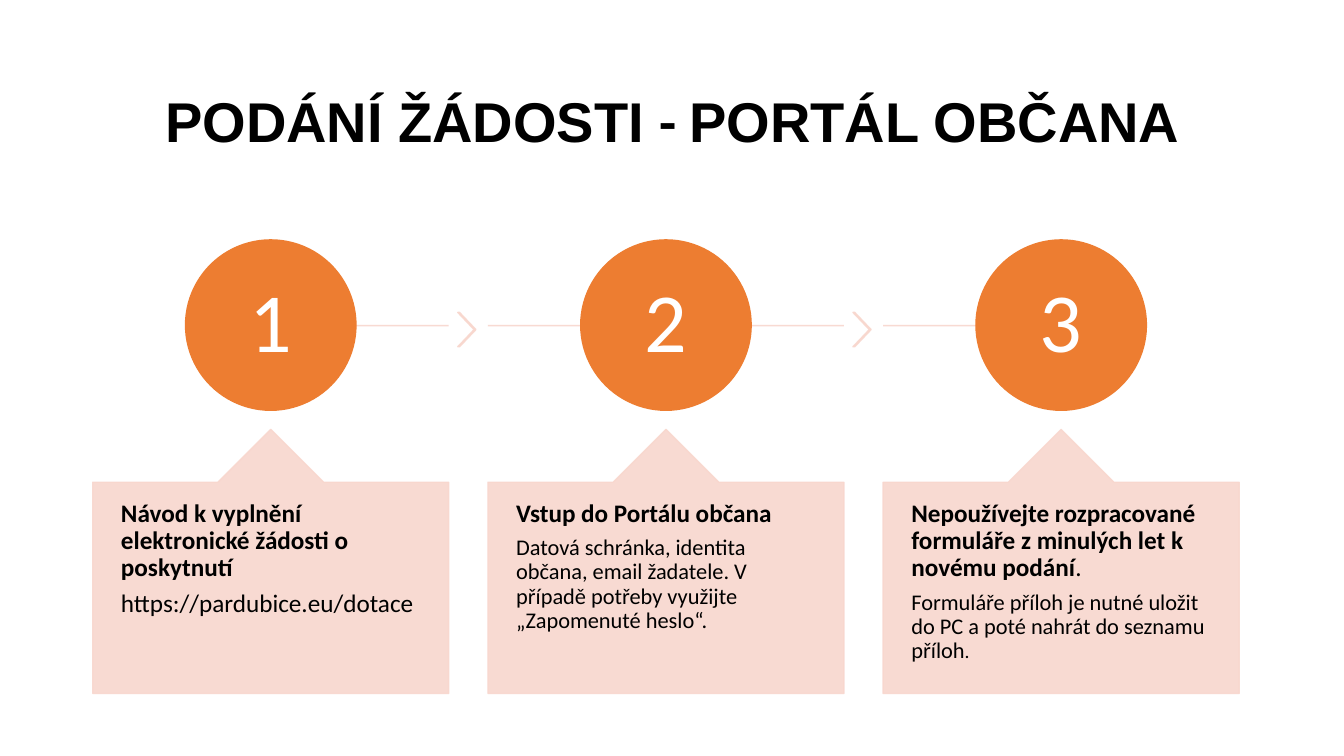
from lxml.etree import SubElement
from pptx import Presentation
from pptx.dml.color import RGBColor
from pptx.enum.shapes import MSO_CONNECTOR, MSO_SHAPE
from pptx.enum.text import MSO_ANCHOR, PP_ALIGN
from pptx.oxml.ns import qn
from pptx.util import Inches, Pt

# Content: runs are (text, format values)
BLACK = RGBColor(0x00, 0x00, 0x00)
WHITE = RGBColor(0xFF, 0xFF, 0xFF)
ORANGE = RGBColor(0xED, 0x7D, 0x31)
PINK = RGBColor(0xF8, 0xD7, 0xCE)
PINK_ALPHA = "90000"

HEADING = {"size": Pt(18), "bold": True}
LINK = {"size": Pt(18), "bold": False}
DETAIL = {"size": Pt(16), "bold": False}
FULL_STOP = {"size": Pt(14), "bold": False}
NUMBER = {"size": Pt(60), "color": WHITE}
TITLE = {"size": Pt(40), "bold": True, "name": "Arial"}

TITLE_RUNS = [
    ("PODÁNÍ ŽÁDOSTI ", TITLE),
    ("- ", {**TITLE, "name": "Calibri"}),
    ("PORTÁL OBČANA", TITLE),
]
STEPS = [
    [
        [("Návod k vyplnění elektronické žádosti o poskytnutí", HEADING)],
        [("https://pardubice.eu/dotace", LINK)],
    ],
    [
        [("Vstup do Portálu občana", HEADING)],
        [("Datová schránka, identita občana, email žadatele. "
          "V případě potřeby využijte „Zapomenuté heslo“.", DETAIL)],
    ],
    [
        [("Nepoužívejte rozpracované formuláře z minulých let k novému podání", HEADING),
         (".", LINK)],
        [("Formuláře příloh je nutné uložit do PC a poté nahrát do seznamu příloh", DETAIL),
         (".", FULL_STOP)],
    ],
]

# Layout in inches
LEFT, COLUMN_WIDTH, COLUMN_STEP = 0.92, 3.53, 3.92
CIRCLE_TOP, CIRCLE_SIZE = 2.38, 1.69
LINE_Y = 3.23
CHEVRON_TOP, CHEVRON_WIDTH, CHEVRON_HEIGHT, CHEVRON_GAP = 3.1, 0.18, 0.34, 0.09
CALLOUT_TOP, CALLOUT_HEIGHT = 4.26, 2.62


def write_paragraphs(text_frame, paragraphs, alignment, anchor, margins):
    text_frame.word_wrap = True
    text_frame.vertical_anchor = anchor
    for side, margin in zip(("left", "top", "right", "bottom"), margins):
        setattr(text_frame, f"margin_{side}", Inches(margin))
    for index, runs in enumerate(paragraphs):
        paragraph = text_frame.add_paragraph() if index else text_frame.paragraphs[0]
        paragraph.alignment = alignment
        paragraph.line_spacing = 0.9
        paragraph.space_before = Pt(0)
        paragraph.space_after = Pt(6.3) if index < len(paragraphs) - 1 else Pt(0)
        for text, values in runs:
            run = paragraph.add_run()
            run.text = text
            values = {"name": "Calibri", "color": BLACK, **values}
            run.font.color.rgb = values.pop("color")
            for name, value in values.items():
                setattr(run.font, name, value)


def make_translucent(shape):
    for color in shape._element.spPr.iter(qn("a:srgbClr")):
        SubElement(color, qn("a:alpha")).set("val", PINK_ALPHA)


def add_filled_shape(slide, kind, left, top, width, height, color, adjustments=()):
    shape = slide.shapes.add_shape(
        kind, Inches(left), Inches(top), Inches(width), Inches(height))
    shape.shadow.inherit = False
    shape.fill.solid()
    shape.fill.fore_color.rgb = color
    shape.line.color.rgb = color
    shape.line.width = Pt(1)
    for index, value in enumerate(adjustments):
        shape.adjustments[index] = value
    if color == PINK:
        make_translucent(shape)
    return shape


def add_line(slide, start, end):
    line = slide.shapes.add_connector(
        MSO_CONNECTOR.STRAIGHT, Inches(start), Inches(LINE_Y), Inches(end), Inches(LINE_Y))
    line.line.color.rgb = PINK
    line.line.width = Pt(1)
    make_translucent(line)
    SubElement(line._element.spPr, qn("a:effectLst"))


def add_step(slide, index, paragraphs):
    left = LEFT + index * COLUMN_STEP
    right = left + COLUMN_WIDTH
    center = left + COLUMN_WIDTH / 2
    is_last = index == len(STEPS) - 1

    # Connecting line, with a chevron before the next step
    add_line(slide, left if index else center, center if is_last else right)
    if not is_last:
        add_filled_shape(slide, MSO_SHAPE.CHEVRON, right + CHEVRON_GAP, CHEVRON_TOP,
                         CHEVRON_WIDTH, CHEVRON_HEIGHT, PINK, [0.9])

    # Numbered circle
    circle = add_filled_shape(slide, MSO_SHAPE.OVAL, center - CIRCLE_SIZE / 2, CIRCLE_TOP,
                              CIRCLE_SIZE, CIRCLE_SIZE, ORANGE)
    write_paragraphs(circle.text_frame, [[(str(index + 1), NUMBER)]],
                     PP_ALIGN.CENTER, MSO_ANCHOR.MIDDLE, [0.07] * 4)

    # Callout with the instructions
    callout = add_filled_shape(slide, MSO_SHAPE.UP_ARROW_CALLOUT, left, CALLOUT_TOP,
                               COLUMN_WIDTH, CALLOUT_HEIGHT, PINK, [0.5, 0.2, 0.2, 1])
    write_paragraphs(callout.text_frame, paragraphs,
                     PP_ALIGN.LEFT, MSO_ANCHOR.TOP, [0.28, 0.18, 0.28, 0.18])


def main():
    presentation = Presentation()
    presentation.slide_width = Inches(13.33)
    presentation.slide_height = Inches(7.5)
    slide = presentation.slides.add_slide(presentation.slide_layouts[0])

    # Title; the unused subtitle is removed
    subtitle = slide.placeholders[1]._element
    subtitle.getparent().remove(subtitle)
    title = slide.shapes.title
    title.left, title.top = Inches(LEFT), Inches(0.61)
    title.width, title.height = Inches(11.5), Inches(1.24)
    write_paragraphs(title.text_frame, [TITLE_RUNS],
                     PP_ALIGN.CENTER, MSO_ANCHOR.MIDDLE, [0.1, 0.05, 0.1, 0.05])

    # Steps
    for index, paragraphs in enumerate(STEPS):
        add_step(slide, index, paragraphs)

    presentation.save("out.pptx")


if __name__ == "__main__":
    main()
